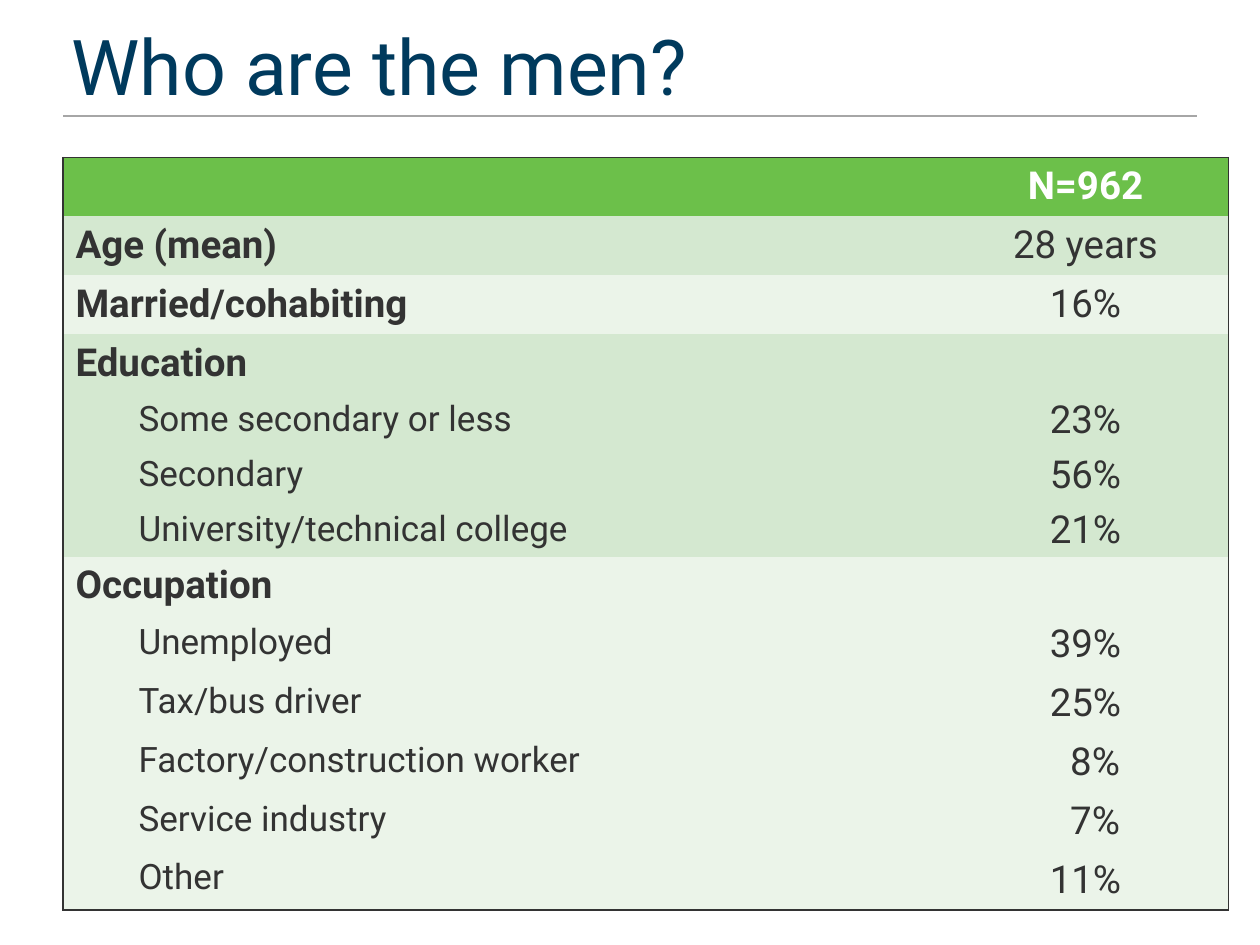
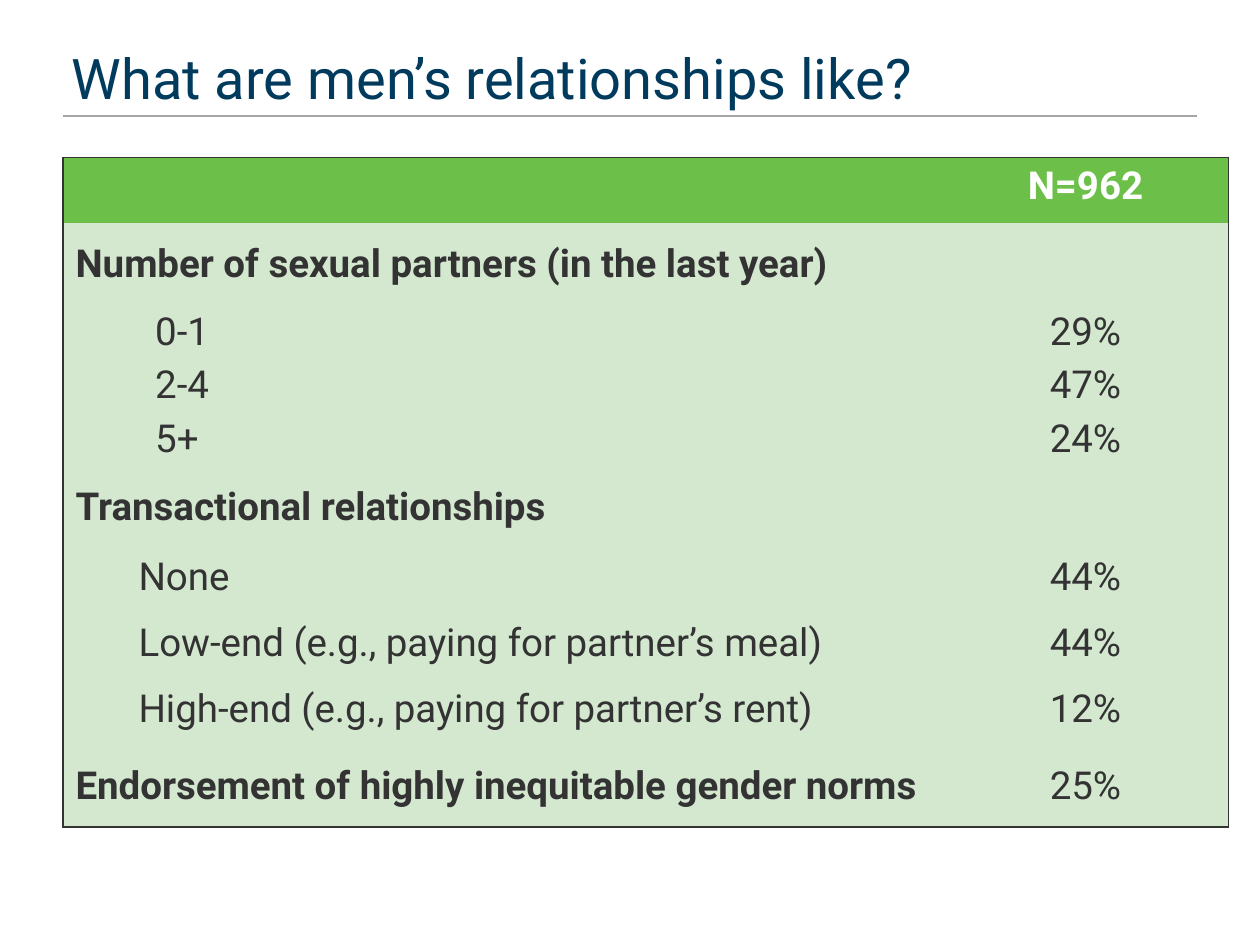
import pptx
import pptx.dml.color
import pptx.enum.shapes
import pptx.enum.text
import pptx.oxml
import pptx.oxml.ns
import pptx.util
from lxml import etree

Pt = pptx.util.Pt
PP_ALIGN = pptx.enum.text.PP_ALIGN
MSO_ANCHOR = pptx.enum.text.MSO_ANCHOR
qn = pptx.oxml.ns.qn

FONT = "Roboto"
NAVY, RULE, INK, WHITE = "003A5D", "A6A6A6", "333333", "FFFFFF"
GREEN, MID, PALE = "6CC04A", "D4E8D0", "EBF4E9"
NO_STYLE = "{2D5ABB26-0587-4C30-8999-92F81FD0307C}"
TITLE_BOX = (33.84, 20.88, 524, 44.64)
TABLE_BOX = (36, 90, 666)
VALUE_WIDTH = 163.44
TIGHT = (0.72, 0.72, 0.72, 0)
INDENT = 36
TOP, MIDDLE = MSO_ANCHOR.TOP, MSO_ANCHOR.MIDDLE


def rgb(value):
    return pptx.dml.color.RGBColor.from_string(value)


def add_run(p, text, size, color, bold=False):
    r = p.add_run()
    r.text = text
    r.font.name = FONT
    r.font.size = Pt(size)
    r.font.bold = bold
    r.font.color.rgb = rgb(color)


def add_title(s, box, text, size):
    left, top, width, height = box
    tf = s.shapes.add_textbox(*map(Pt, box)).text_frame
    tf.word_wrap = True
    tf.vertical_anchor = MSO_ANCHOR.BOTTOM
    tf.margin_top, tf.margin_bottom = 0, Pt(2)
    add_run(tf.paragraphs[0], text, size, NAVY)
    y = Pt(top + height + 0.72)
    line = s.shapes.add_connector(
        pptx.enum.shapes.MSO_CONNECTOR.STRAIGHT, Pt(36), y, Pt(684), y)
    line.line.color.rgb = rgb(RULE)
    line.line.width = Pt(1)
    etree.SubElement(line._element.spPr, qn("a:effectLst"))


def set_borders(cell, sides):
    tcPr = cell._tc.get_or_add_tcPr()
    for side in "LRTB":
        ln = etree.SubElement(tcPr, qn("a:ln" + side), w=str(Pt(1)))
        if side in sides:
            fill = etree.SubElement(ln, qn("a:solidFill"))
            etree.SubElement(fill, qn("a:srgbClr"), val=INK)
        else:
            etree.SubElement(ln, qn("a:noFill"))


def fill_cell(cell, text, fill, sides, size=22, color=INK, bold=False,
              align=PP_ALIGN.LEFT, indent=0, anchor=TOP, margins=None):
    set_borders(cell, sides)
    cell.fill.solid()
    cell.fill.fore_color.rgb = rgb(fill)
    cell.vertical_anchor = anchor
    if margins:
        (cell.margin_left, cell.margin_top,
         cell.margin_right, cell.margin_bottom) = map(Pt, margins)
    p = cell.text_frame.paragraphs[0]
    p.alignment = align
    if indent:
        p._p.get_or_add_pPr().set("marL", str(Pt(indent)))
    if text:
        add_run(p, text, size, color, bold)


def row(height, label, value, fill, label_style=None, value_style=None):
    return height, label, value, fill, label_style or {}, value_style or {}


def head(height, label, value, fill, anchor=TOP):
    return row(height, label, value, fill, dict(bold=True, anchor=anchor), dict(anchor=anchor))


def add_table(s, box, rows):
    left, top, width = box
    total = sum(r[0] for r in rows)
    table = s.shapes.add_table(len(rows), 2, Pt(left), Pt(top), Pt(width), Pt(total)).table
    table._tbl.tblPr.find(qn("a:tableStyleId")).text = NO_STYLE
    table.columns[0].width = Pt(width - VALUE_WIDTH)
    table.columns[1].width = Pt(VALUE_WIDTH)
    for i, (height, label, value, fill, label_style, value_style) in enumerate(rows):
        table.rows[i].height = Pt(height)
        edge = ("T" if i == 0 else "") + ("B" if i == len(rows) - 1 else "")
        fill_cell(table.cell(i, 0), label, fill, "L" + edge, **label_style)
        fill_cell(table.cell(i, 1), value, fill, "R" + edge,
                  align=PP_ALIGN.CENTER, **value_style)


def header(height):
    return row(height, "", "N=962", GREEN, None, dict(color=WHITE, bold=True))


def profile_rows():
    full, short = 33.05, 30.7
    item = dict(size=20, indent=INDENT)
    education = [("Some secondary or less", "23%"), ("Secondary", "56%"),
                 ("University/technical college", "21%")]
    occupation = [("Unemployed", "39%"), ("Tax/bus driver", "25%"),
                  ("Factory/construction worker", "8%"),
                  ("Service industry", "7%"), ("Other", "11%")]
    return [
        header(full),
        head(full, "Age (mean)", "28 years", MID),
        head(full, "Married/cohabiting", "16%", PALE),
        head(full, "Education", "", MID),
        *[row(short, label, value, MID, item, dict(anchor=MIDDLE, margins=TIGHT))
          for label, value in education],
        head(full, "Occupation", "", PALE),
        *[row(full, label, value, PALE, item, dict(indent=11 if len(value) == 2 else 0))
          for label, value in occupation],
    ]


def relationship_rows():
    tight = dict(anchor=MIDDLE, margins=TIGHT)
    partners = [("0-1", "29%"), ("2-4", "47%"), ("5+", "24%")]
    transactions = [("None", "44%"),
                    ("Low-end (e.g., paying for partner’s meal)", "44%"),
                    ("High-end (e.g., paying for partner’s rent)", "12%")]
    return [
        header(37.6),
        head(46.4, "Number of sexual partners (in the last year)", "", MID, MIDDLE),
        *[row(30.8, label, value, MID, dict(indent=52, **tight), tight)
          for label, value in partners],
        head(47.2, "Transactional relationships", "", MID, MIDDLE),
        *[row(37.6, label, value, MID, dict(indent=INDENT))
          for label, value in transactions],
        head(46.4, "Endorsement of highly inequitable gender norms", "25%", MID, MIDDLE),
    ]


def add_slide(prs, title, size, rows):
    s = prs.slides.add_slide(prs.slide_layouts[6])
    add_title(s, TITLE_BOX, title, size)
    add_table(s, TABLE_BOX, rows)


def main():
    prs = pptx.Presentation()
    prs.slide_width, prs.slide_height = Pt(720), Pt(540)
    add_slide(prs, "Who are the men?", 44, profile_rows())
    add_slide(prs, "What are men’s relationships like?", 32, relationship_rows())
    prs.save("out.pptx")


if __name__ == "__main__":
    main()
